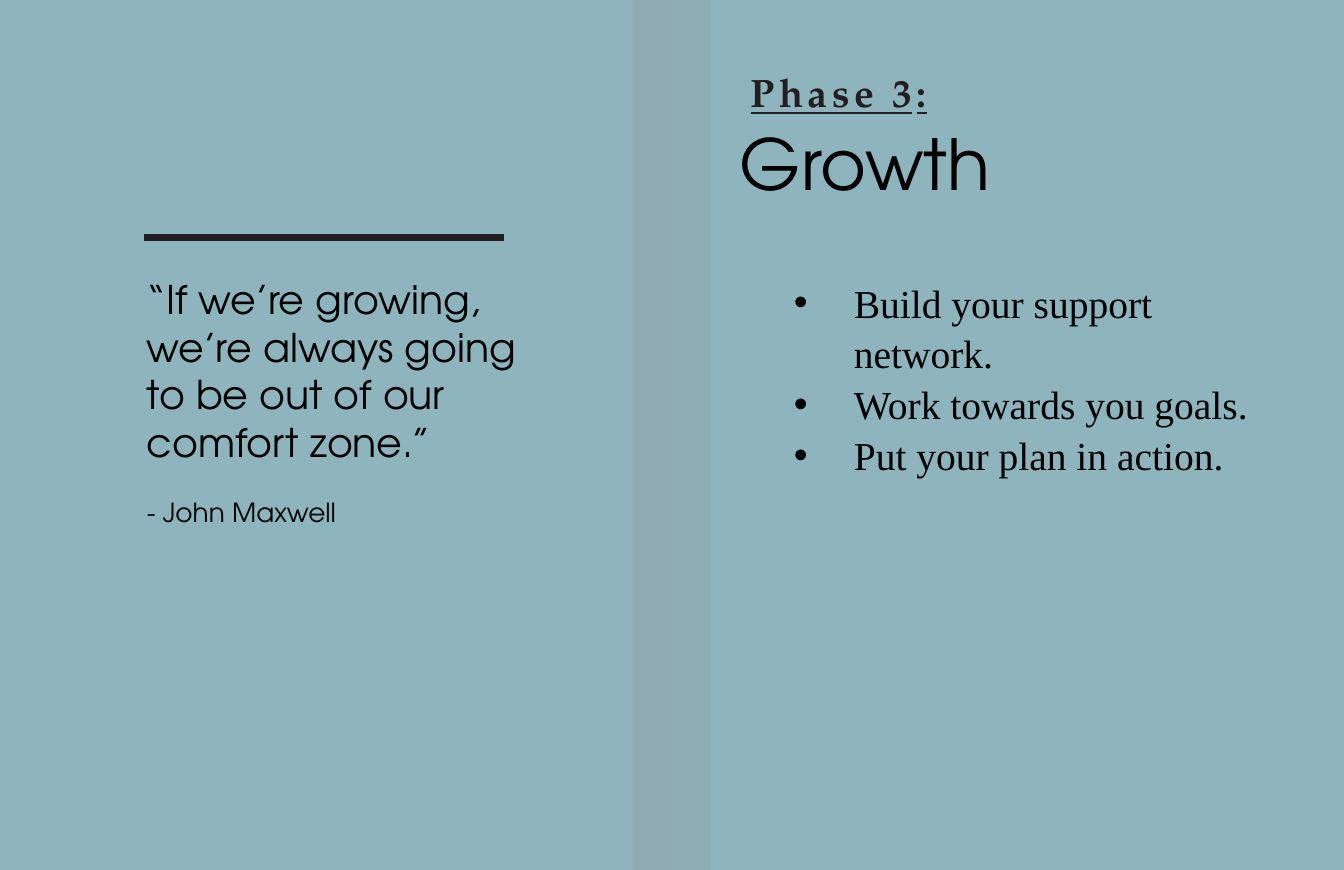
from pptx import Presentation
from pptx.dml.color import RGBColor
from pptx.enum import shapes, text
from pptx.oxml import ns, xmlchemy
from pptx.util import Inches, Pt

COLORS = {"page": "8EB5BE", "spine": "949CA1", "ink": "231F20", "text": "000000"}
SANS, SERIF, BODY = "TeX Gyre Adventor", "TeX Gyre Pagella", "Times New Roman"
WIDTH, HEIGHT = 8.5, 5.5
FOLD = WIDTH / 2


def rgb(name):
    return RGBColor.from_string(COLORS[name])


def place(shape, left, top, width, height):
    shape.left, shape.top = Inches(left), Inches(top)
    shape.width, shape.height = Inches(width), Inches(height)


def prepare_frame(shape, flush=False):
    """Wrap and top-align the text; flush drops the inner margins."""
    frame = shape.text_frame
    frame.word_wrap = True
    frame.auto_size = text.MSO_AUTO_SIZE.NONE
    frame.vertical_anchor = text.MSO_ANCHOR.TOP
    if flush:
        frame.margin_left = frame.margin_right = frame.margin_bottom = 0
        frame.margin_top = Inches(0.01)
    return frame


def style(paragraph, font, size, color="text", before=0):
    paragraph.alignment = text.PP_ALIGN.LEFT
    paragraph.space_before = Pt(before)
    paragraph.font.name = font
    paragraph.font.size = Pt(size)
    paragraph.font.color.rgb = rgb(color)


def indent(paragraph, margin, first=0):
    properties = paragraph._p.get_or_add_pPr()
    properties.set("marL", str(Inches(margin)))
    properties.set("indent", str(Inches(first)))


def draw_spine(slide, width=0.25):
    for left, opacity in ((FOLD, 34), (FOLD - width, 44)):
        strip = slide.shapes.add_shape(
            shapes.MSO_SHAPE.RECTANGLE, Inches(left), 0, Inches(width), Inches(HEIGHT))
        strip.shadow.inherit = False
        strip.fill.solid()
        strip.fill.fore_color.rgb = rgb("spine")
        strip.line.fill.background()
        color = strip._element.spPr.find(".//" + ns.qn("a:srgbClr"))
        alpha = xmlchemy.OxmlElement("a:alpha")
        alpha.set("val", str(opacity * 1000))
        color.append(alpha)


def draw_quote_page(slide, left, top):
    rule = slide.shapes.add_connector(
        shapes.MSO_CONNECTOR.STRAIGHT,
        Inches(left + 0.91), Inches(top + 1.5), Inches(left + 3.19), Inches(top + 1.5))
    rule.line.color.rgb = rgb("ink")
    rule.line.width = Pt(3)
    rule._element.spPr.append(xmlchemy.OxmlElement("a:effectLst"))

    quote = slide.shapes.add_textbox(
        Inches(left + 0.83), Inches(top + 1.69), Inches(2.59), Inches(1.72))
    frame = prepare_frame(quote)
    saying = frame.paragraphs[0]
    saying.text = "“If we’re growing, we’re always going to be out of our comfort zone.”"
    style(saying, SANS, 18)
    author = frame.add_paragraph()
    author.text = "- John Maxwell"
    style(author, SANS, 12, before=14.4)


def draw_phase_page(slide, left, top):
    phase = slide.shapes.add_textbox(
        Inches(left + 0.49), Inches(top + 0.42), Inches(3.4), Inches(0.33))
    label = prepare_frame(phase, flush=True).paragraphs[0]
    style(label, SERIF, 18, "ink", before=1)
    indent(label, 0.01)
    label.font.bold = label.font.underline = True
    for words, spacing in (("Phase 3", 2), (":", 0.3)):
        run = label.add_run()
        run.text = words
        run._r.get_or_add_rPr().set("spc", str(int(spacing * 100)))

    title = slide.shapes.title
    place(title, left + 0.42, top + 0.75, 3.83, 0.55)
    heading = prepare_frame(title, flush=True).paragraphs[0]
    heading.text = "Growth"
    style(heading, SANS, 32, before=1)
    indent(heading, 0.01)

    steps = slide.placeholders[1]
    place(steps, left + 0.67, top + 1.69, 3.22, 1.71)
    frame = prepare_frame(steps)
    frame.text = "Build your support network.\nWork towards you goals.\nPut your plan in action."
    for step in frame.paragraphs:
        style(step, BODY, 18)
        step.line_spacing = 1.07
        indent(step, 0.38, -0.38)


def main():
    deck = Presentation()
    deck.slide_width, deck.slide_height = Inches(WIDTH), Inches(HEIGHT)
    slide = deck.slides.add_slide(deck.slide_layouts[1])
    slide.background.fill.solid()
    slide.background.fill.fore_color.rgb = rgb("page")
    draw_spine(slide)
    draw_quote_page(slide, 0, 0)
    draw_phase_page(slide, FOLD, 0)
    deck.save("out.pptx")


if __name__ == "__main__":
    main()
